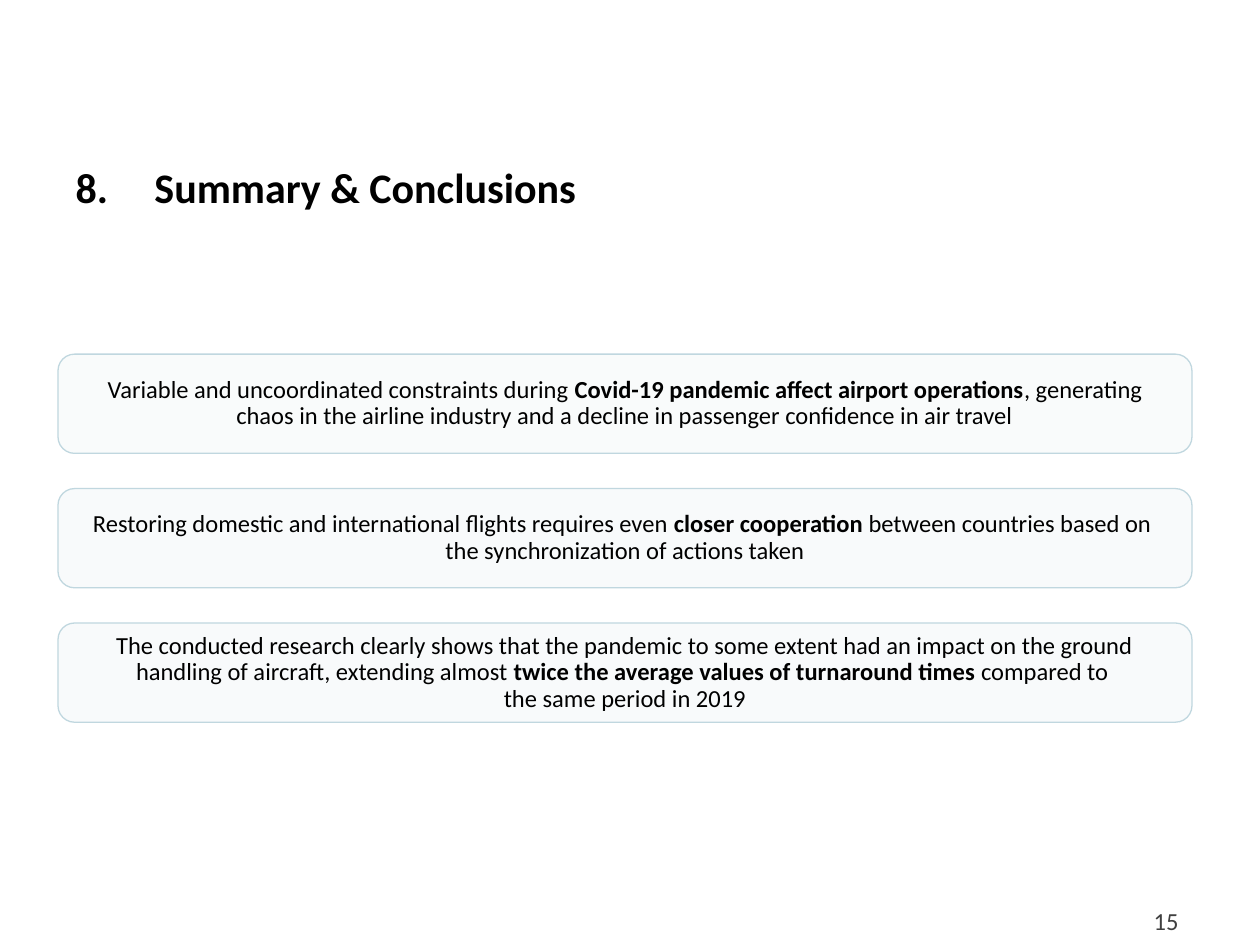
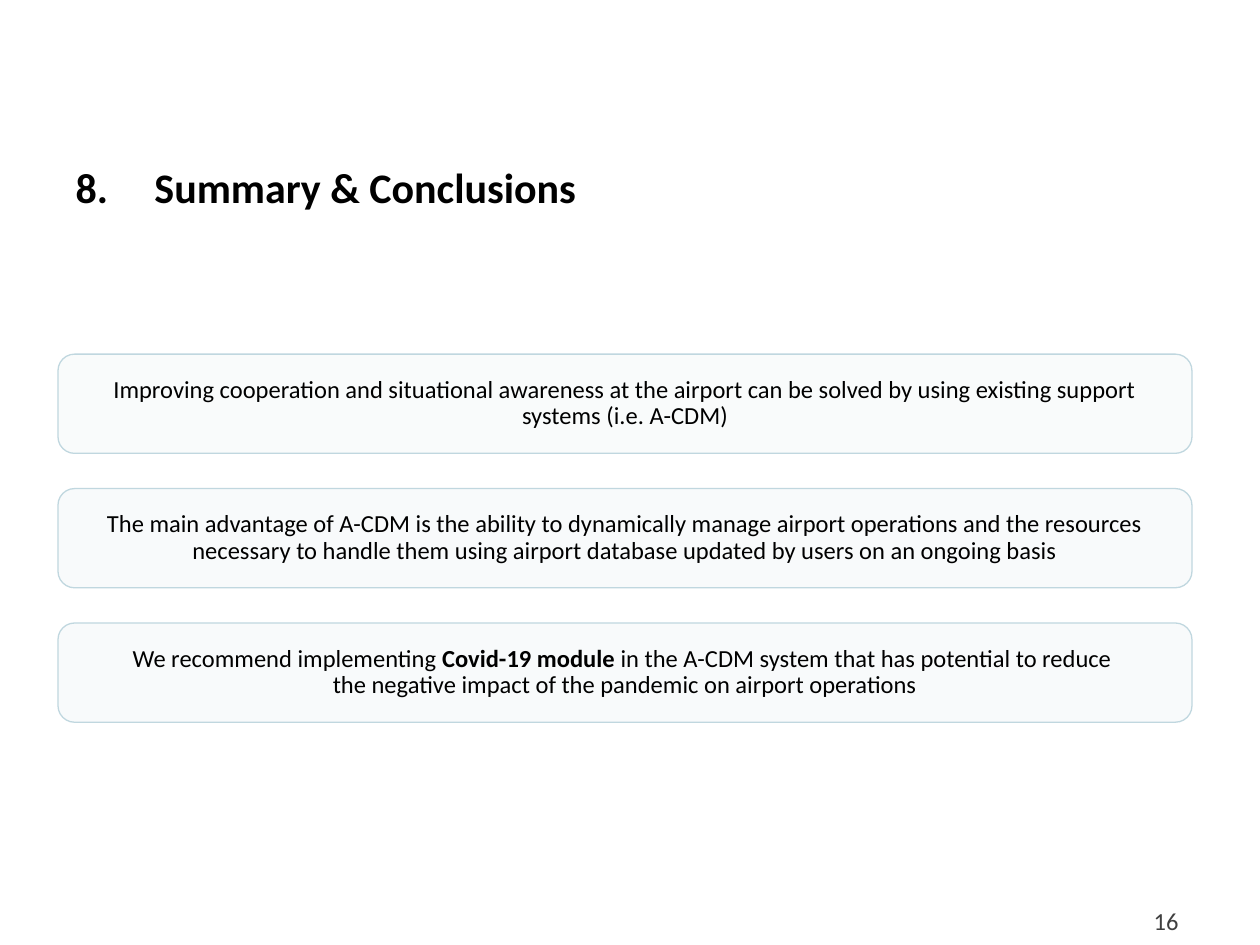
from lxml.etree import SubElement
from pptx import Presentation
from pptx.dml.color import RGBColor
from pptx.enum.shapes import MSO_SHAPE as Shape
from pptx.enum.text import MSO_ANCHOR as Anchor, MSO_AUTO_SIZE as AutoSize, PP_ALIGN as Align
from pptx.oxml.ns import qn
from pptx.util import Cm, Pt

FONT = "Calibri"
BLACK = RGBColor(0x00, 0x00, 0x00)
GREY = RGBColor(0x40, 0x40, 0x40)
BORDER = RGBColor(0xC0, 0xD7, 0xDF)
FIRST_FILL = RGBColor(0xEC, 0xF2, 0xF4)
NEXT_FILL = RGBColor(0xE9, 0xF0, 0xF3)
FILL_OPACITY = 30

TITLE = "Summary & Conclusions"
TITLE_NUMBER = 8
TITLE_BOX = (Cm(1.27), Cm(3.12), Cm(22.86), Cm(1.12))
NUMBER_BOX = (Cm(18.08), Cm(18.14), Cm(5.93), Cm(0.84))
CARDS_BOX = (Cm(1.17), Cm(7.14), Cm(22.86), Cm(7.42))
CARD_GAP = Cm(0.71)
CARD_INSET = Cm(0.28)

# Each conclusion is a list of (text, bold) parts; "\n" marks a line break.
PAGES = {
    15: [
        [("Variable and uncoordinated constraints during ", False),
         ("Covid-19 pandemic affect airport operations", True),
         (", generating chaos in the airline industry and a decline in "
          "passenger confidence in air travel", False)],
        [("Restoring domestic and international flights requires even ", False),
         ("closer cooperation ", True),
         ("between countries based on \nthe synchronization of actions taken", False)],
        [("The conducted research clearly shows that the pandemic to some extent had "
          "an impact on the ground handling of aircraft, extending almost ", False),
         ("twice the average values of turnaround times ", True),
         ("compared to \nthe same period in 2019", False)],
    ],
    16: [
        [("Improving cooperation and situational awareness at the airport can be "
          "solved by using existing support systems (i.e. A-CDM)", False)],
        [("The main advantage of A-CDM is the ability to dynamically manage airport "
          "operations and the resources necessary to handle them using airport "
          "database updated by users on an ongoing basis", False)],
        [("We recommend implementing ", False),
         ("Covid-19 module ", True),
         ("in the A-CDM system that has potential to reduce \n"
          "the negative impact of the pandemic on airport operations", False)],
    ],
}


def set_font(paragraph, size, color):
    font = paragraph.font
    font.name, font.size = FONT, Pt(size)
    font.color.rgb = color


def add_title(slide, box):
    title = slide.shapes.title
    title.left, title.top, title.width, title.height = box
    frame = title.text_frame
    frame.text = TITLE
    frame.auto_size = AutoSize.NONE
    frame.vertical_anchor = Anchor.TOP
    paragraph = frame.paragraphs[0]
    paragraph.alignment = Align.LEFT
    properties = paragraph._p.get_or_add_pPr()
    properties.set("marL", str(Cm(1.59)))
    properties.set("indent", str(-Cm(1.59)))
    SubElement(properties, qn("a:buFont"), typeface="+mj-lt")
    SubElement(properties, qn("a:buAutoNum"), type="arabicPeriod", startAt=str(TITLE_NUMBER))
    set_font(paragraph, 24, BLACK)
    paragraph.font.bold = True


def add_page_number(slide, box, number):
    frame = slide.shapes.add_textbox(*box).text_frame
    frame.word_wrap = True
    paragraph = frame.paragraphs[0]
    paragraph.text = str(number)
    paragraph.alignment = Align.RIGHT
    set_font(paragraph, 14, GREY)


def add_parts(paragraph, parts):
    """Write the bold and regular runs, turning newlines into line breaks."""
    for text, bold in parts:
        for index, line in enumerate(text.split("\n")):
            if index:
                paragraph.add_line_break()
            run = paragraph.add_run()
            run.text = line
            if bold:
                run.font.bold = True


def add_card(slide, box, parts, fill_color):
    card = slide.shapes.add_shape(Shape.ROUNDED_RECTANGLE, *box)
    card.shadow.inherit = False
    card.fill.solid()
    card.fill.fore_color.rgb = fill_color
    color = card._element.spPr.find(f"{qn('a:solidFill')}/{qn('a:srgbClr')}")
    SubElement(color, qn("a:alpha"), val=str(FILL_OPACITY * 1000))
    card.line.color.rgb = BORDER
    card.line.width = Pt(0.75)

    frame = card.text_frame
    frame.word_wrap = True
    frame.vertical_anchor = Anchor.MIDDLE
    frame.margin_left = frame.margin_right = CARD_INSET
    frame.margin_top = frame.margin_bottom = CARD_INSET
    paragraph = frame.paragraphs[0]
    paragraph.alignment = Align.CENTER
    paragraph.line_spacing = 0.9
    set_font(paragraph, 14, BLACK)
    add_parts(paragraph, parts)


def add_cards(slide, box, conclusions):
    """Stack equal cards with equal gaps to fill the box."""
    left, top, width, height = box
    count = len(conclusions)
    card_height = (height - CARD_GAP * (count - 1)) // count
    for index, parts in enumerate(conclusions):
        card_top = top + index * (card_height + CARD_GAP)
        fill_color = NEXT_FILL if index else FIRST_FILL
        add_card(slide, (left, card_top, width, card_height), parts, fill_color)


def add_conclusions_slide(presentation, number, conclusions):
    slide = presentation.slides.add_slide(presentation.slide_layouts.get_by_name("Title Only"))
    add_title(slide, TITLE_BOX)
    add_page_number(slide, NUMBER_BOX, number)
    add_cards(slide, CARDS_BOX, conclusions)


def main():
    presentation = Presentation()
    presentation.slide_width, presentation.slide_height = Cm(25.4), Cm(19.05)
    for number, conclusions in PAGES.items():
        add_conclusions_slide(presentation, number, conclusions)
    presentation.save("out.pptx")


if __name__ == "__main__":
    main()
